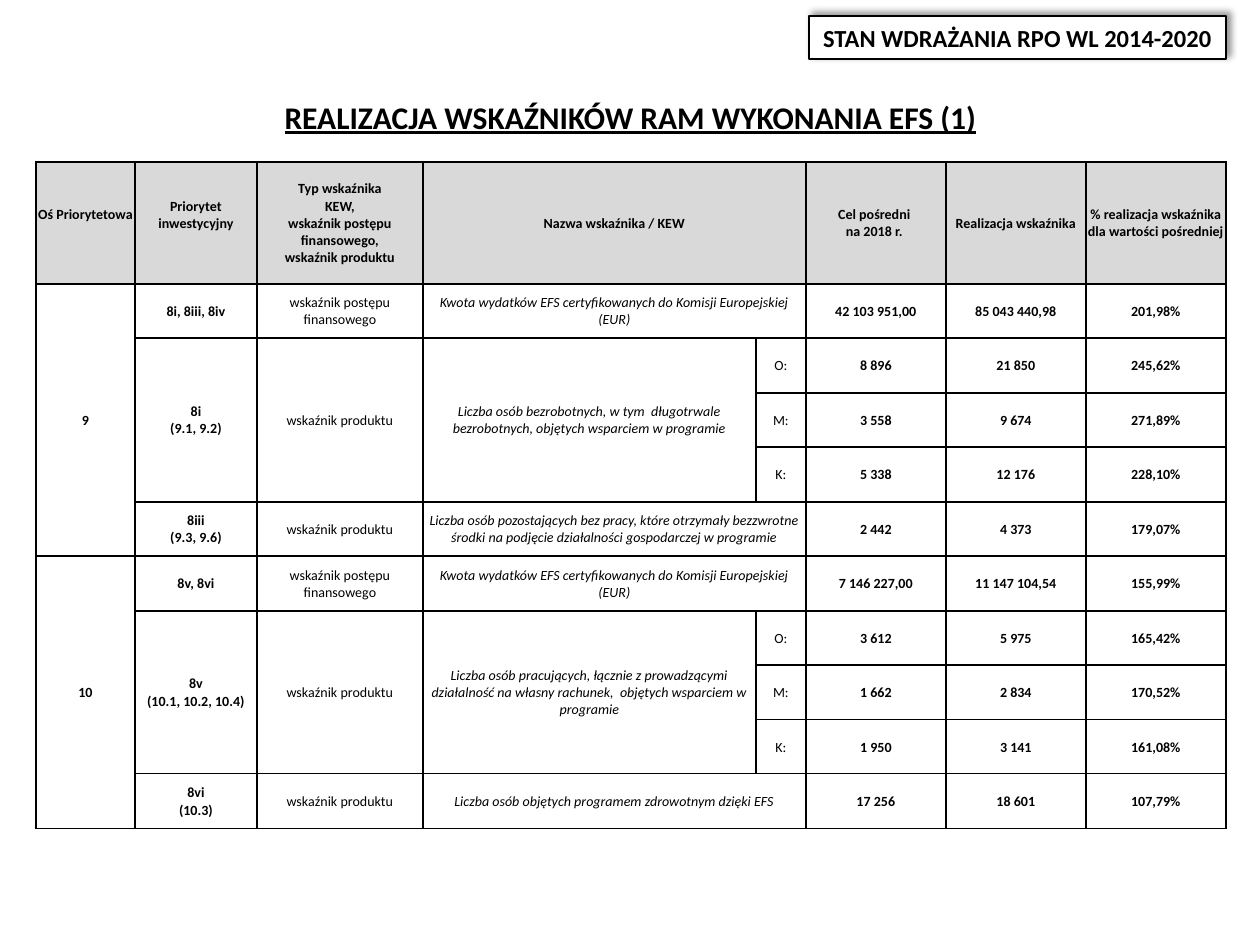
import pptx
import pptx.util
import pptx.oxml
import pptx.oxml.ns
import pptx.dml.color
import pptx.enum.text
import pptx.enum.shapes

PX = 914400 / 126
FONT = "Calibri"
COLORS = {"ink": "000000", "head": "D9D9D9", "paper": "FFFFFF"}
COLS = [99, 122, 166, 333, 50, 140, 140, 140]
ROWS = [122] + [54, 55] * 5
HEAD = [
    "Oś Priorytetowa", "Priorytet inwestycyjny",
    "Typ wskaźnika\vKEW,\vwskaźnik postępu finansowego,\vwskaźnik produktu",
    "Nazwa wskaźnika / KEW", None, "Cel pośredni \vna 2018 r. ",
    "Realizacja wskaźnika", "% realizacja wskaźnika dla wartości pośredniej",
]
MONEY = "wskaźnik postępu finansowego"
OUTPUT = "wskaźnik produktu"
COST = "Kwota wydatków EFS certyfikowanych do Komisji Europejskiej (EUR)"
GROUPS = [
    ("9", ["8i, 8iii, 8iv", "8i\v(9.1, 9.2)", "8iii\v(9.3, 9.6)"],
     ["Liczba osób bezrobotnych, w tym  długotrwale bezrobotnych, "
      "objętych wsparciem w programie",
      "Liczba osób pozostających bez pracy, które otrzymały bezzwrotne "
      "środki na podjęcie działalności gospodarczej w programie"],
     [("42 103 951,00", "85 043 440,98", "201,98%"),
      ("8 896", "21 850", "245,62%"),
      ("3 558", "9 674", "271,89%"),
      ("5 338", "12 176", "228,10%"),
      ("2 442", "4 373", "179,07%")]),
    ("10", ["8v, 8vi", "8v\v(10.1, 10.2, 10.4)", "8vi\v(10.3)"],
     ["Liczba osób pracujących, łącznie z prowadzącymi działalność na "
      "własny rachunek,  objętych wsparciem w programie",
      "Liczba osób objętych programem zdrowotnym dzięki EFS"],
     [("7 146 227,00", "11 147 104,54", "155,99%"),
      ("3 612", "5 975", "165,42%"),
      ("1 662", "2 834", "170,52%"),
      ("1 950", "3 141", "161,08%"),
      ("17 256", "18 601", "107,79%")]),
]


def px(num):
    return pptx.util.Emu(round(num * PX))


def color(name):
    return pptx.dml.color.RGBColor.from_string(COLORS[name])


def style(para, size, bold=True, italic=False):
    para.alignment = pptx.enum.text.PP_ALIGN.CENTER
    font = para.font
    font.name, font.size = FONT, pptx.util.Pt(size)
    font.bold, font.italic = bold, italic
    font.color.rgb = color("ink")


def add_title(slide):
    title = slide.shapes.title
    title.left, title.top, title.width, title.height = map(px, (35, 86, 1191, 54))
    frame = title.text_frame
    frame.text = "REALIZACJA WSKAŹNIKÓW RAM WYKONANIA EFS (1)"
    frame.vertical_anchor = pptx.enum.text.MSO_ANCHOR.TOP
    frame.auto_size = pptx.enum.text.MSO_AUTO_SIZE.SHAPE_TO_FIT_TEXT
    para = frame.paragraphs[0]
    style(para, 18)
    para.font.underline = True
    para.line_spacing = 1.14


def add_tag(slide):
    kind = pptx.enum.shapes.MSO_SHAPE.RECTANGLE
    tag = slide.shapes.add_shape(kind, *map(px, (809, 16, 417, 43)))
    tag.fill.solid()
    tag.fill.fore_color.rgb = color("paper")
    tag.line.color.rgb = color("ink")
    tag.line.width = pptx.util.Pt(1)
    tag.shadow.inherit = False
    effects = tag._element.spPr.find(pptx.oxml.ns.qn("a:effectLst"))
    effects.append(pptx.oxml.parse_xml(
        f'<a:outerShdw {pptx.oxml.ns.nsdecls("a")} blurRad="50800" dist="38100" '
        f'dir="18900000" algn="bl" rotWithShape="0"><a:srgbClr val="{COLORS["ink"]}">'
        '<a:alpha val="40000"/></a:srgbClr></a:outerShdw>'))
    frame = tag.text_frame
    frame.text = "STAN WDRAŻANIA RPO WL 2014-2020"
    frame.word_wrap = False
    frame.auto_size = pptx.enum.text.MSO_AUTO_SIZE.SHAPE_TO_FIT_TEXT
    style(frame.paragraphs[0], 14)


def group_rows(axis, codes, names, nums):
    lead = [
        [axis, codes[0], MONEY, COST, None],
        [None, codes[1], OUTPUT, names[0], "O:"],
        [None, None, None, None, "M:"],
        [None, None, None, None, "K:"],
        [None, codes[2], OUTPUT, names[1], None],
    ]
    return [left + list(right) for left, right in zip(lead, nums)]


def add_edges(cell):
    props = cell._tc.get_or_add_tcPr()
    for spot, side in enumerate("LRTB"):
        props.insert(spot, pptx.oxml.parse_xml(
            f'<a:ln{side} {pptx.oxml.ns.nsdecls("a")} w="12700"><a:solidFill>'
            f'<a:srgbClr val="{COLORS["ink"]}"/></a:solidFill></a:ln{side}>'))


def fill_cell(cell, row, col, text):
    add_edges(cell)
    if row and col < 2:
        cell.fill.background()
    else:
        cell.fill.solid()
        cell.fill.fore_color.rgb = color("paper" if row else "head")
    cell.margin_left = cell.margin_right = cell.margin_top = px(1)
    cell.margin_bottom = px(0 if row or col > 1 else 17)
    cell.vertical_anchor = pptx.enum.text.MSO_ANCHOR.MIDDLE
    if text:
        cell.text = text
    bold = row == 0 or col not in (2, 3, 4)
    style(cell.text_frame.paragraphs[0], 8, bold, row > 0 and col == 3)


def merge(grid, top, left, high, wide):
    grid.cell(top, left).merge(grid.cell(top + high - 1, left + wide - 1))


def add_grid(slide):
    frame = slide.shapes.add_table(
        len(ROWS), len(COLS), *map(px, (36, 162, sum(COLS), sum(ROWS))))
    grid = frame.table
    grid.first_row = grid.horz_banding = False
    for col, wide in zip(grid.columns, COLS):
        col.width = px(wide)
    for row, high in zip(grid.rows, ROWS):
        row.height = px(high)
    data = [HEAD] + [row for group in GROUPS for row in group_rows(*group)]
    for r, row in enumerate(data):
        for c, text in enumerate(row):
            fill_cell(grid.cell(r, c), r, c, text)
    merge(grid, 0, 3, 1, 2)
    for top in (1, 6):
        merge(grid, top, 0, 5, 1)
        for row in (top, top + 4):
            merge(grid, row, 3, 1, 2)
        for col in (1, 2, 3):
            merge(grid, top + 1, col, 3, 1)


def main():
    deck = pptx.Presentation()
    deck.slide_width, deck.slide_height = px(1260), px(945)
    slide = deck.slides.add_slide(deck.slide_layouts[5])
    add_title(slide)
    add_tag(slide)
    add_grid(slide)
    deck.save("out.pptx")


if __name__ == "__main__":
    main()
